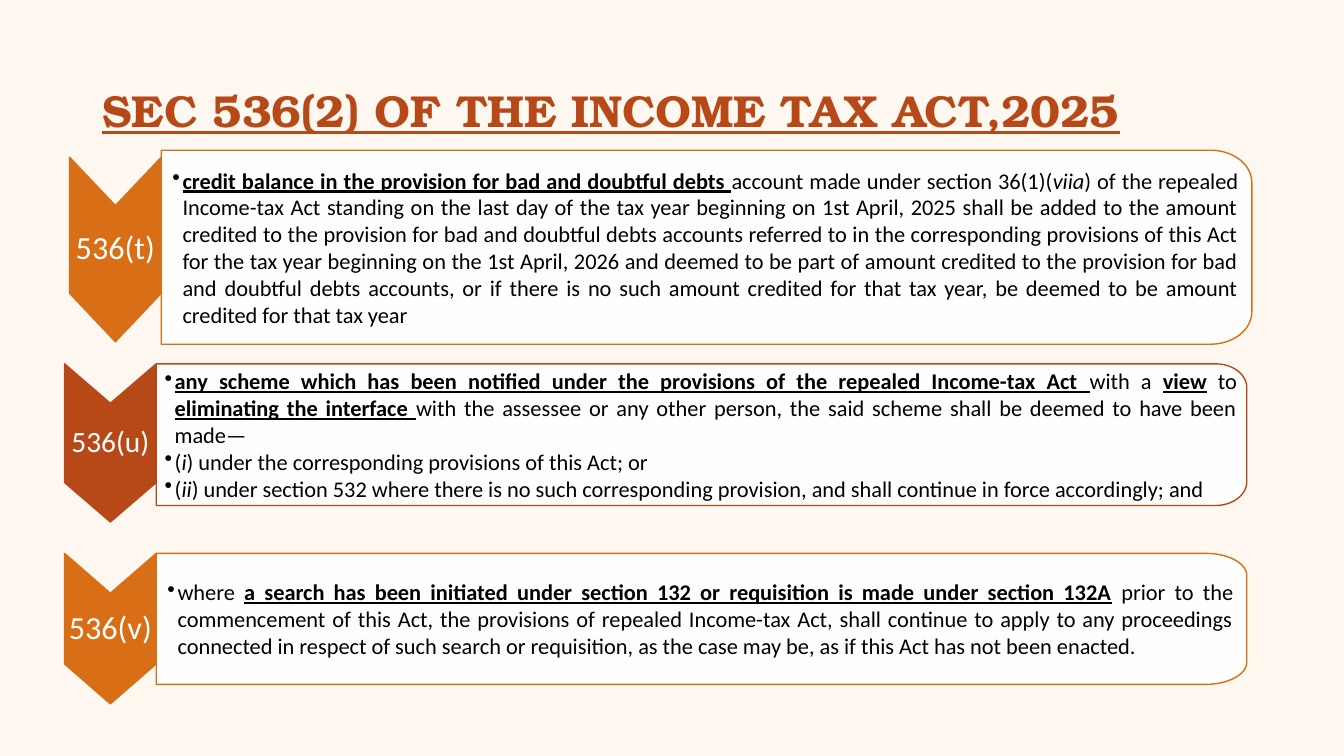
from math import cos, pi, sin

from lxml.etree import SubElement
from pptx import Presentation
from pptx.dml.color import RGBColor
from pptx.enum.text import MSO_ANCHOR, PP_ALIGN
from pptx.oxml.ns import qn
from pptx.util import Pt

COLORS = {
    "background": "FEF8F0",
    "rust": "B74919",
    "orange": "D86E15",
    "white": "FFFFFF",
    "black": "000000",
}
CHEVRON_WIDTH = 65.5
PANEL_WIDTH = 779
CORNER_STEPS = 12

# Each run is (text, style): "k" marks bold underlined key words, "i" italics
ROWS = [
    {
        "label": "536(t)", "size": 23, "color": "orange", "left": 49.7,
        "chevron": (112.3, 131.8, 34.6), "panel": (107.3, 138.6),
        "corner": (29.5, 23), "insets": (8, 9.6),
        "paragraphs": [[
            ("credit balance in the provision for bad and doubtful debts ", "k"),
            ("account made under section 36(1)(", ""),
            ("viia", "i"),
            (") of the repealed Income-tax Act standing on the last day of the tax year "
             "beginning on 1st April, 2025 shall be added to the amount credited to the "
             "provision for bad and doubtful debts accounts referred to in the corresponding "
             "provisions of this Act for the tax year beginning on the 1st April, 2026 and "
             "deemed to be part of amount credited to the provision for bad and doubtful "
             "debts accounts, or if there is no such amount credited for that tax year, be "
             "deemed to be amount credited for that tax year", ""),
        ]],
    },
    {
        "label": "536(u)", "size": 21, "color": "rust", "left": 46.1,
        "chevron": (259.9, 113, 28.2), "panel": (259.9, 101.2),
        "corner": (22.3, 17), "insets": (6, 7.2),
        "paragraphs": [
            [
                ("any scheme which has been notified under the provisions of the repealed "
                 "Income-tax Act ", "k"),
                ("with a ", ""),
                ("view", "k"),
                (" to ", ""),
                ("eliminating the interface ", "k"),
                ("with the assessee or any other person, the said scheme shall be deemed to "
                 "have been made—", ""),
            ],
            [("(", ""), ("i", "i"),
             (") under the corresponding provisions of this Act; or", "")],
            [("(", ""), ("ii", "i"),
             (") under section 532 where there is no such corresponding provision, and shall "
              "continue in force accordingly; and", "")],
        ],
    },
    {
        "label": "536(v)", "size": 23, "color": "orange", "left": 46.1,
        "chevron": (395.3, 107.5, 28.5), "panel": (395.3, 93.6),
        "corner": (29.5, 15.8), "insets": (8, 9.6),
        "paragraphs": [[
            ("where ", ""),
            ("a search has been initiated under section 132 or requisition is made under "
             "section 132A", "k"),
            (" prior to the commencement of this Act, the provisions of repealed Income-tax "
             "Act, shall continue to apply to any proceedings connected in respect of such "
             "search or requisition, as the case may be, as if this Act has not been "
             "enacted.", ""),
        ]],
    },
]


class SectionSlide:
    """Holds the slide and the style of its elements."""

    body_font = "Calibri"
    title_font = "TeX Gyre Bonum"
    body_size = 16

    def __init__(self, presentation):
        self.slide = presentation.slides.add_slide(presentation.slide_layouts[6])
        self.paint(self.slide.background.fill, "background")

    def paint(self, fill, color):
        fill.solid()
        fill.fore_color.rgb = RGBColor.from_string(COLORS[color])

    def add_run(self, paragraph, text, size, color, font_name=body_font, style=""):
        run = paragraph.add_run()
        run.text = text
        font = run.font
        font.name, font.size = font_name, Pt(size)
        font.color.rgb = RGBColor.from_string(COLORS[color])
        font.bold = font.underline = style == "k"
        font.italic = style == "i"

    def set_frame(self, shape, left, top, right, bottom):
        frame = shape.text_frame
        frame.word_wrap = True
        frame.vertical_anchor = MSO_ANCHOR.MIDDLE
        frame.margin_left, frame.margin_top = Pt(left), Pt(top)
        frame.margin_right, frame.margin_bottom = Pt(right), Pt(bottom)
        return frame

    def add_outline(self, points, fill, line):
        start, *others = [(Pt(x), Pt(y)) for x, y in points]
        builder = self.slide.shapes.build_freeform(*start)
        builder.add_line_segments(others, close=True)
        shape = builder.convert_to_shape()
        shape.shadow.inherit = False
        self.paint(shape.fill, fill)
        self.paint(shape.line.fill, line)
        shape.line.width = Pt(1)
        return shape

    def add_title(self, text):
        box = self.slide.shapes.add_textbox(Pt(66), Pt(28.8), Pt(828), Pt(104.4))
        paragraph = self.set_frame(box, 7.2, 3.6, 7.2, 3.6).paragraphs[0]
        paragraph.line_spacing = 0.9
        self.add_run(paragraph, text, 32, "rust", self.title_font, "k")

    def add_chevron(self, row):
        left, (top, height, notch) = row["left"], row["chevron"]
        right, middle, bottom = left + CHEVRON_WIDTH, left + CHEVRON_WIDTH / 2, top + height
        points = [(right, top), (right, bottom - notch), (middle, bottom),
                  (left, bottom - notch), (left, top), (middle, top + notch)]
        shape = self.add_outline(points, row["color"], row["color"])
        paragraph = self.set_frame(shape, 1.4, 34, 1.4, 34).paragraphs[0]
        paragraph.alignment = PP_ALIGN.CENTER
        paragraph.line_spacing = 0.9
        self.add_run(paragraph, row["label"], row["size"], "white")

    def add_panel(self, row):
        left, (top, height) = row["left"] + CHEVRON_WIDTH, row["panel"]
        right, bottom = left + PANEL_WIDTH, top + height
        radius_x, radius_y = row["corner"]
        angles = [step * pi / 2 / CORNER_STEPS for step in range(CORNER_STEPS + 1)]
        arc = [(right - radius_x + radius_x * sin(angle), radius_y - radius_y * cos(angle))
               for angle in angles]
        points = [(left, top)] + [(x, top + drop) for x, drop in arc]
        points += [(x, bottom - drop) for x, drop in reversed(arc)] + [(left, bottom)]
        shape = self.add_outline(points, "white", row["color"])
        # Slightly transparent fill
        fill_color = shape._element.spPr.find(qn("a:solidFill"))[0]
        SubElement(fill_color, qn("a:alpha"), val="90000")

        # Justified bullet text
        near, far = row["insets"]
        frame = self.set_frame(shape, near, far, far, far)
        for index, runs in enumerate(row["paragraphs"]):
            paragraph = frame.add_paragraph() if index else frame.paragraphs[0]
            paragraph.alignment = PP_ALIGN.JUSTIFY
            properties = paragraph._p.get_or_add_pPr()
            properties.set("marL", str(Pt(7.2)))
            properties.set("indent", str(Pt(-7.2)))
            SubElement(properties, qn("a:buChar"), char="•")
            for text, style in runs:
                self.add_run(paragraph, text, self.body_size, "black", style=style)


def main():
    presentation = Presentation()
    presentation.slide_width, presentation.slide_height = Pt(960), Pt(540)
    section = SectionSlide(presentation)
    section.add_title("SEC 536(2) OF THE INCOME TAX ACT,2025")
    for row in ROWS:
        section.add_panel(row)
        section.add_chevron(row)
    presentation.save("out.pptx")


if __name__ == "__main__":
    main()
